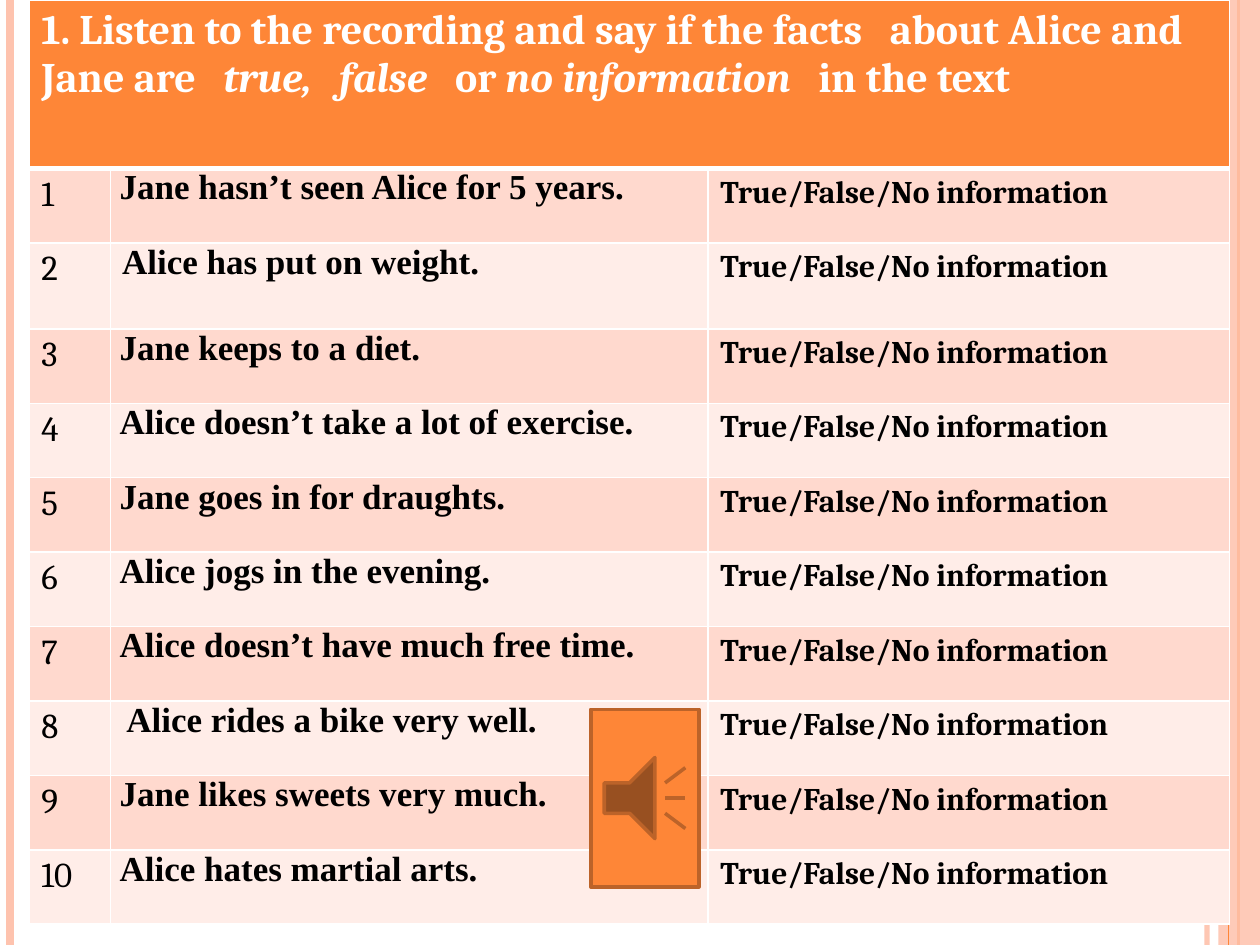
from dataclasses import dataclass

import lxml.etree
import pptx
import pptx.dml.color
import pptx.enum.shapes
import pptx.oxml.ns
import pptx.util

Cm = pptx.util.Cm
Pt = pptx.util.Pt
qn = pptx.oxml.ns.qn
SHAPES = pptx.enum.shapes.MSO_SHAPE

COLOURS = {
    "orange": "FE8637",
    "rust": "BC6329",
    "peach": "FEC3AE",
    "band_dark": "FFD9CE",
    "band_light": "FFEDE8",
    "white": "FFFFFF",
    "black": "000000",
}
PAGE_WIDTH, PAGE_HEIGHT = 25.4, 19.05
COLUMN_WIDTHS = (1.65, 12.04, 10.52)
HEADER_HEIGHT, ROW_HEIGHT, TALL_ROW_HEIGHT = 3.4, 1.5, 1.73
CHOICES = "True/False/No information"


@dataclass
class Stripe:
    x: float
    width: float
    colour: str
    opacity: int = 100


@dataclass
class Statement:
    text: str
    left: float = 1.27
    hanging: float = -1.27
    height: float = ROW_HEIGHT


LEFT_STRIPES = (
    Stripe(24.33, 3, "peach", 93),
    Stripe(0.2, 4.5, "peach"),
    Stripe(24.97, 1.5, "orange"),
)
EDGE_STRIPE = Stripe(24.77, 0.75, "orange")

TITLE = (
    ("1. Listen to the recording and say if the facts   about Alice and Jane are   ", False),
    ("true,   false", True),
    ("   or ", False),
    ("no information   ", True),
    ("in the text", False),
)
STATEMENTS = (
    Statement("Jane hasn’t seen Alice for 5 years.", 0, 0),
    Statement("Alice has put on weight.", 0.05, 0, TALL_ROW_HEIGHT),
    Statement("Jane keeps to a diet."),
    Statement("Alice doesn’t take a lot of exercise."),
    Statement("Jane goes in for draughts."),
    Statement("Alice jogs in the evening."),
    Statement("Alice doesn’t have much free time."),
    Statement(" Alice rides a bike very well.", 0, 0),
    Statement("Jane likes sweets very much."),
    Statement("Alice hates martial arts."),
)


def colour_of(name: str) -> pptx.dml.color.RGBColor:
    return pptx.dml.color.RGBColor.from_string(COLOURS[name])


def set_opacity(element, percent: int) -> None:
    if percent < 100:
        colour = next(element.iter(qn("a:srgbClr")))
        lxml.etree.SubElement(colour, qn("a:alpha"), val=str(percent * 1000))


def draw_stripe(page, stripe: Stripe) -> None:
    line = page.shapes.add_connector(
        pptx.enum.shapes.MSO_CONNECTOR.STRAIGHT,
        Cm(stripe.x), Cm(0), Cm(stripe.x), Cm(PAGE_HEIGHT),
    )
    line.line.color.rgb = colour_of(stripe.colour)
    line.line.width = Pt(stripe.width)
    properties = line._element.spPr
    set_opacity(properties, stripe.opacity)
    lxml.etree.SubElement(properties, qn("a:effectLst"))


def draw_shape(page, kind, left: float, top: float, width: float, height: float,
               fill: str, opacity: int = 100, outline: str = "") -> None:
    shape = page.shapes.add_shape(kind, Cm(left), Cm(top), Cm(width), Cm(height))
    shape.shadow.inherit = False
    shape.fill.solid()
    shape.fill.fore_color.rgb = colour_of(fill)
    set_opacity(shape._element.spPr, opacity)
    if outline:
        shape.line.color.rgb = colour_of(outline)
        shape.line.width = Pt(2)
    else:
        shape.line.fill.background()


def add_text(para, text: str, *, size: float, font: str = "Cambria",
             colour: str = "black", bold: bool = True, italic: bool = False) -> None:
    span = para.add_run()
    span.text = text
    span.font.name = font
    span.font.size = Pt(size)
    span.font.bold = bold
    span.font.italic = italic
    span.font.color.rgb = colour_of(colour)


def style_cell(cell, fill: str, top: float = 1, bottom: float = 1) -> None:
    cell.fill.solid()
    cell.fill.fore_color.rgb = colour_of(fill)
    properties = cell._tc.get_or_add_tcPr()
    sides = (("a:lnL", 1), ("a:lnR", 1), ("a:lnT", top), ("a:lnB", bottom))
    for position, (side, width) in enumerate(sides):
        border = lxml.etree.Element(qn(side), w=str(int(Pt(width))))
        solid = lxml.etree.SubElement(border, qn("a:solidFill"))
        lxml.etree.SubElement(solid, qn("a:srgbClr"), val=COLOURS["white"])
        properties.insert(position, border)


def fill_statement(cell, statement: Statement) -> None:
    cell.margin_left = cell.margin_right = Cm(0.18)
    cell.margin_top = cell.margin_bottom = 0
    para = cell.text_frame.paragraphs[0]
    properties = para._p.get_or_add_pPr()
    properties.set("marL", str(int(Cm(statement.left))))
    properties.set("indent", str(int(Cm(statement.hanging))))
    add_text(para, statement.text, size=20, font="Times New Roman")


def draw_quiz(page) -> None:
    heights = [HEADER_HEIGHT] + [statement.height for statement in STATEMENTS]
    table = page.shapes.add_table(
        len(heights), len(COLUMN_WIDTHS),
        Cm(0.58), Cm(0), Cm(sum(COLUMN_WIDTHS)), Cm(sum(heights)),
    ).table
    table.horz_banding = False
    for column, width in zip(table.columns, COLUMN_WIDTHS):
        column.width = Cm(width)
    for row, height in zip(table.rows, heights):
        row.height = Cm(height)

    for cell in table.rows[0].cells:
        style_cell(cell, "orange", bottom=3)
    header = table.cell(0, 0)
    header.merge(table.cell(0, len(COLUMN_WIDTHS) - 1))
    for text, italic in TITLE:
        add_text(header.text_frame.paragraphs[0], text,
                 size=24, colour="white", italic=italic)

    for number, statement in enumerate(STATEMENTS, start=1):
        cells = list(table.rows[number].cells)
        band = "band_dark" if number % 2 else "band_light"
        for cell in cells:
            style_cell(cell, band, top=3 if number == 1 else 1)
        add_text(cells[0].text_frame.paragraphs[0], str(number), size=20, bold=False)
        fill_statement(cells[1], statement)
        add_text(cells[2].text_frame.paragraphs[0], CHOICES, size=18)


def main() -> None:
    deck = pptx.Presentation()
    deck.slide_width = Cm(PAGE_WIDTH)
    deck.slide_height = Cm(PAGE_HEIGHT)
    page = deck.slides.add_slide(deck.slide_layouts[6])
    for stripe in LEFT_STRIPES:
        draw_stripe(page, stripe)
    draw_shape(page, SHAPES.RECTANGLE, 24.56, 0, 0.84, PAGE_HEIGHT, "peach", opacity=87)
    draw_stripe(page, EDGE_STRIPE)
    draw_quiz(page)
    draw_shape(page, SHAPES.ACTION_BUTTON_SOUND, 11.91, 14.3, 2.18, 3.58,
               "orange", outline="rust")
    deck.save("out.pptx")


if __name__ == "__main__":
    main()
